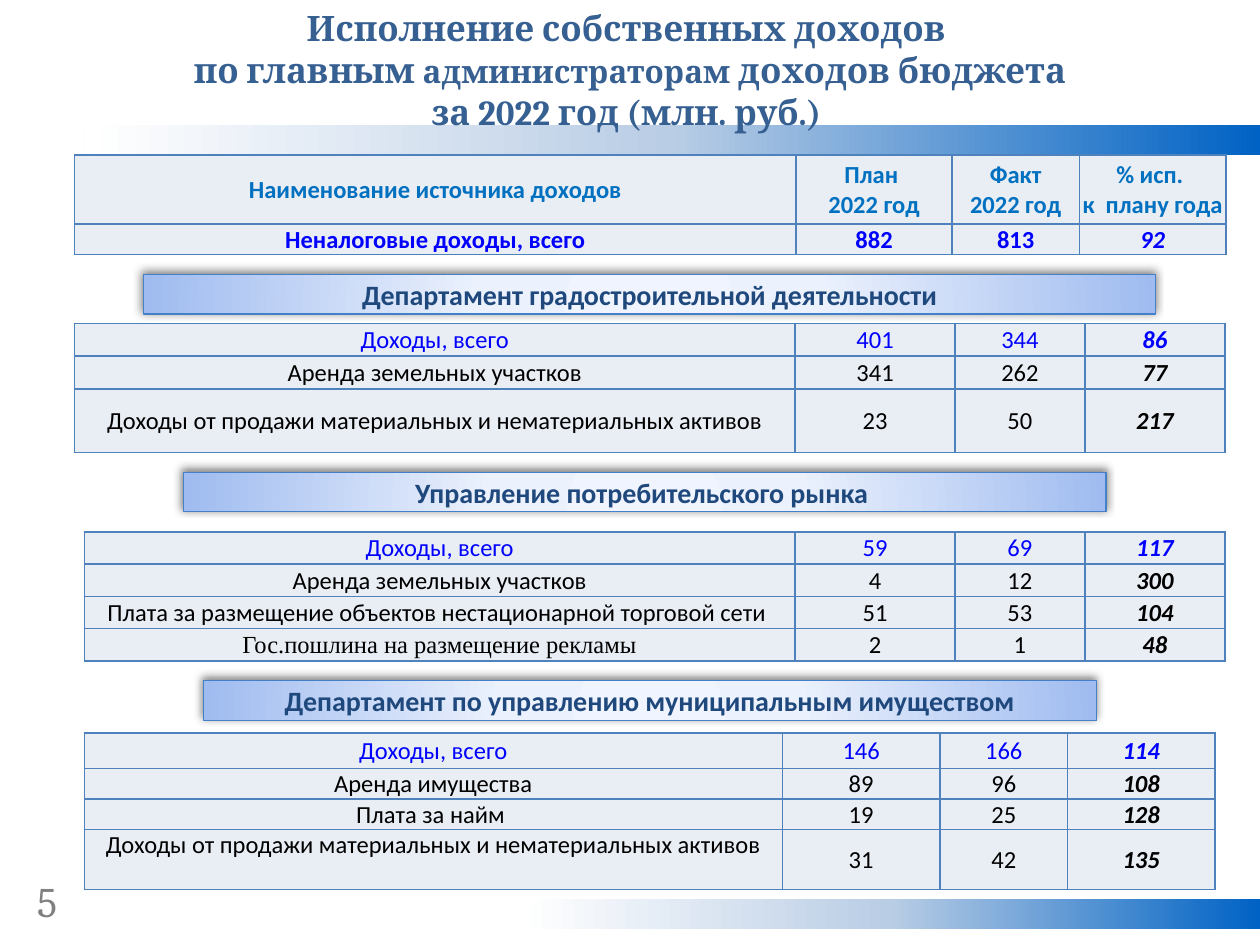
from lxml import etree
from pptx import Presentation
from pptx.dml.color import RGBColor
from pptx.enum.shapes import MSO_SHAPE
from pptx.enum.text import MSO_ANCHOR, MSO_AUTO_SIZE, PP_ALIGN
from pptx.oxml import parse_xml
from pptx.oxml.ns import nsdecls, qn
from pptx.util import Cm, Pt

RECTANGLE = MSO_SHAPE.RECTANGLE
TOP, MIDDLE = MSO_ANCHOR.TOP, MSO_ANCHOR.MIDDLE
FIT_SHAPE = MSO_AUTO_SIZE.SHAPE_TO_FIT_TEXT
CENTER = PP_ALIGN.CENTER

COLORS = {
    "title": "376092", "number": "808080", "heading": "1F497D",
    "header": "0070C0", "total": "0000FF", "item": "000000",
    "cell": "E9EDF4", "border": "4F81BD", "banner_line": "4480C8",
    "shadow": "000000",
}
BAND_STOPS = [(0, "0062C4"), (50, "B9CDE5"), (100, "FFFFFF")]
BANNER_STOPS = [(0, "EFF4FE"), (34, "EBF1FD"), (100, "9FBBEF")]
BAND_SHADE = f'<a:lin {nsdecls("a")} ang="10800000" scaled="0"/>'
BANNER_SHADE = (f'<a:path {nsdecls("a")} path="circle"><a:fillToRect '
                'l="50000" t="155000" r="50000" b="-55000"/></a:path>')

ASSET_SALES = "Доходы от продажи материальных и нематериальных активов"
SUMMARY = [
    ("Наименование источника доходов", "План \n2022 год", "Факт\n2022 год",
     "% исп. \nк  плану года"),
    ("Неналоговые доходы, всего", "882", "813", "92"),
]
URBAN_PLANNING = [
    ("Доходы, всего", "401", "344", "86"),
    ("Аренда земельных участков", "341", "262", "77"),
    (ASSET_SALES, "23", "50", "217"),
]
CONSUMER_MARKET = [
    ("Доходы, всего", "59", "69", "117"),
    ("Аренда земельных участков", "4", "12", "300"),
    ("Плата за размещение объектов нестационарной торговой сети ", "51", "53", "104"),
    ("Гос.пошлина на размещение рекламы", "2", "1", "48"),
]
MUNICIPAL_PROPERTY = [
    ("Доходы, всего", "146", "166", "114"),
    ("Аренда имущества", "89", "96", "108"),
    ("Плата за найм ", "19", "25", "128"),
    (ASSET_SALES, "31", "42", "135"),
]


def add_run(paragraph, text, size, color, font="Calibri", bold=False, italic=False):
    run = paragraph.add_run()
    run.text = text
    run.font.size = Pt(size)
    run.font.name = font
    run.font.bold = bold
    run.font.italic = italic
    run.font.color.rgb = RGBColor.from_string(COLORS[color])


def apply_gradient(shape, stops, shade):
    shape.fill.gradient()
    gradient = shape._element.spPr.find(qn("a:gradFill"))
    gradient.clear()
    stop_list = etree.SubElement(gradient, qn("a:gsLst"))
    for position, color in stops:
        stop = etree.SubElement(stop_list, qn("a:gs"), pos=str(position * 1000))
        etree.SubElement(stop, qn("a:srgbClr"), val=color)
    gradient.append(parse_xml(shade))


def add_band(slide, left, top, width):
    band = slide.shapes.add_shape(RECTANGLE, Cm(left), Cm(top), Cm(width), Cm(0.6))
    band.shadow.inherit = False
    band.line.fill.background()
    apply_gradient(band, BAND_STOPS, BAND_SHADE)


def add_title(slide):
    title = slide.shapes.title
    slide.shapes._spTree.append(title._element)
    title.left, title.top, title.width, title.height = Cm(0), Cm(0), Cm(25.4), Cm(2.82)
    frame = title.text_frame
    frame.auto_size = FIT_SHAPE
    frame.vertical_anchor = TOP
    first, second = frame.paragraphs[0], frame.add_paragraph()
    first.alignment = second.alignment = CENTER
    add_run(first, "Исполнение собственных доходов ", 20, "title", "Cambria", True)
    add_run(second, "по главным ", 20, "title", "Cambria", True)
    add_run(second, "администраторам", 18, "title", "Cambria", True)
    add_run(second, " доходов бюджета", 20, "title", "Cambria", True)
    second.add_line_break()
    add_run(second, "за 2022 год (млн. руб.) ", 20, "title", "Cambria", True)


def add_page_number(slide):
    number = slide.shapes.add_textbox(Cm(0.5), Cm(17.52), Cm(0.8), Cm(1.28))
    number.text_frame.word_wrap = True
    add_run(number.text_frame.paragraphs[0], "5", 24, "number", "Cambria")


def add_banner(slide, text, left, top, width):
    banner = slide.shapes.add_shape(RECTANGLE, Cm(left), Cm(top), Cm(width), Cm(0.8))
    banner.shadow.inherit = False
    banner.line.color.rgb = RGBColor.from_string(COLORS["banner_line"])
    banner.line.width = Pt(0.75)
    apply_gradient(banner, BANNER_STOPS, BANNER_SHADE)
    effects = banner._element.spPr.find(qn("a:effectLst"))
    shadow = etree.SubElement(effects, qn("a:outerShdw"), blurRad=str(Pt(5)),
                              dist=str(Pt(2)), dir=str(245 * 60000), rotWithShape="0")
    tint = etree.SubElement(shadow, qn("a:srgbClr"), val=COLORS["shadow"])
    etree.SubElement(tint, qn("a:alpha"), val="50000")
    frame = banner.text_frame
    frame.vertical_anchor = MIDDLE
    frame.paragraphs[0].alignment = CENTER
    add_run(frame.paragraphs[0], text, 16, "heading", bold=True)


def add_borders(cell):
    properties = cell._tc.get_or_add_tcPr()
    for position, side in enumerate(("lnL", "lnR", "lnT", "lnB")):
        border = etree.Element(qn(f"a:{side}"), w=str(Pt(1)))
        fill = etree.SubElement(border, qn("a:solidFill"))
        etree.SubElement(fill, qn("a:srgbClr"), val=COLORS["border"])
        properties.insert(position, border)


def fill_cell(cell, text, color, font="Calibri", bold=False, italic=False):
    cell.margin_left = cell.margin_right = cell.margin_top = Cm(0.02)
    cell.margin_bottom = 0
    cell.vertical_anchor = MIDDLE
    cell.fill.solid()
    cell.fill.fore_color.rgb = RGBColor.from_string(COLORS["cell"])
    add_borders(cell)
    frame = cell.text_frame
    for index, line in enumerate(text.split("\n")):
        paragraph = frame.add_paragraph() if index else frame.paragraphs[0]
        paragraph.alignment = CENTER
        add_run(paragraph, line, 14, color, font, bold, italic)


def add_income_table(slide, rows, left, top, widths, heights, summary=False):
    table = slide.shapes.add_table(len(rows), len(widths), Cm(left), Cm(top),
                                   Cm(sum(widths)), Cm(sum(heights))).table
    table.first_row = table.horz_banding = False
    for column, width in zip(table.columns, widths):
        column.width = Cm(width)
    for row, height in zip(table.rows, heights):
        row.height = Cm(height)
    row_colors = ["header", "total"] if summary else ["total"] + ["item"] * (len(rows) - 1)
    for r, values in enumerate(rows):
        for c, value in enumerate(values):
            percent = c == len(widths) - 1
            font = "Times New Roman" if value.startswith("Гос.пошлина") else "Calibri"
            fill_cell(table.cell(r, c), value, row_colors[r], font,
                      bold=summary or percent,
                      italic=percent and row_colors[r] != "header")
    return table


def main():
    deck = Presentation()
    deck.slide_width, deck.slide_height = Cm(25.4), Cm(19.05)
    slide = deck.slides.add_slide(deck.slide_layouts[5])

    add_band(slide, 1.7, 2.52, 23.7)
    add_band(slide, 10.5, 18.13, 14.9)
    add_page_number(slide)
    add_title(slide)

    add_income_table(slide, SUMMARY, 1.5, 3.12, [14.55, 3.14, 2.57, 2.95],
                     [1.4, 0.61], summary=True)
    add_banner(slide, "Департамент градостроительной деятельности", 2.9, 5.53, 20.4)
    add_income_table(slide, URBAN_PLANNING, 1.5, 6.52, [14.53, 3.22, 2.62, 2.82],
                     [0.66, 0.66, 1.28])
    add_banner(slide, "Управление потребительского рынка ", 3.7, 9.52, 18.6)
    add_income_table(slide, CONSUMER_MARKET, 1.7, 10.72, [14.33, 3.22, 2.62, 2.82],
                     [0.65] * 4)
    add_banner(slide, "Департамент по управлению муниципальным имуществом",
               4.1, 13.72, 18)
    property_table = add_income_table(slide, MUNICIPAL_PROPERTY, 1.7, 14.78,
                                      [14.07, 3.18, 2.57, 2.97], [0.71, 0.61, 0.61, 1.21])
    property_table.cell(3, 0).vertical_anchor = TOP
    deck.save("out.pptx")


if __name__ == "__main__":
    main()
